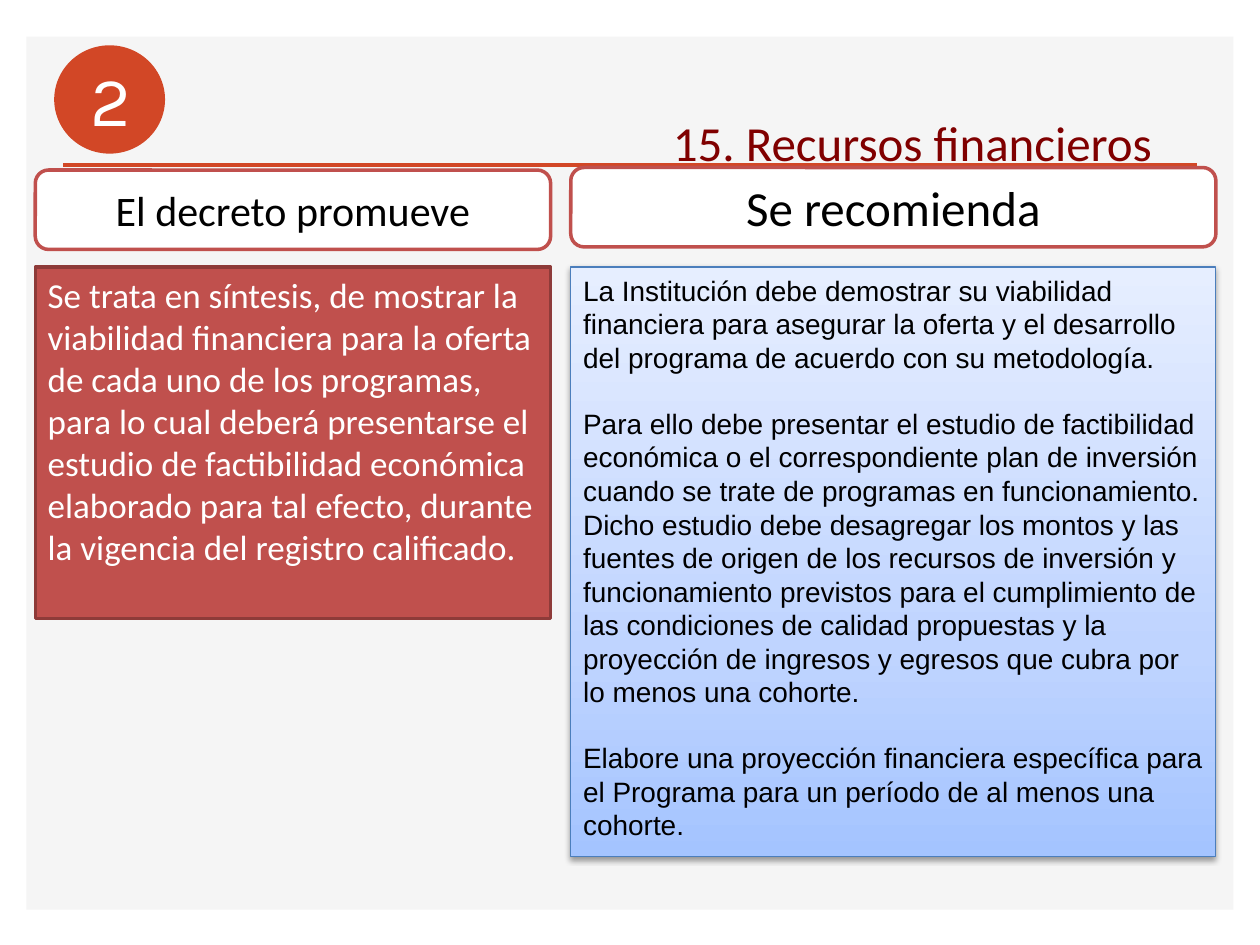
import pptx
import pptx.util
from lxml import etree
from pptx.dml.color import RGBColor
from pptx.enum.shapes import MSO_CONNECTOR, MSO_SHAPE
from pptx.enum.text import MSO_ANCHOR, MSO_AUTO_SIZE, PP_ALIGN
from pptx.oxml.ns import qn
from pptx.util import Inches, Pt

COLORS = {
    "backdrop": "F5F5F5",
    "accent": "D24726",
    "title": "800000",
    "red": "C0504D",
    "dark_red": "8E3B39",
    "blue": "4B7EBC",
    "white": "FFFFFF",
    "black": "000000",
}
BLUE_STOPS = [(0, "A4C4FF"), (35, "BFD4FF"), (100, "E6EEFF")]

DECREE = [
    "Se trata en síntesis, de mostrar la viabilidad financiera para la oferta "
    "de cada uno de los programas, para lo cual deberá presentarse "
    "el estudio de factibilidad económica elaborado para tal efecto, "
    "durante la vigencia del registro calificado."
]
ADVICE = [
    "La Institución debe demostrar su viabilidad financiera para asegurar la "
    "oferta y el desarrollo del programa de acuerdo con su metodología.",
    "Para ello debe presentar el estudio de factibilidad económica o el "
    "correspondiente plan de inversión cuando se trate de programas en "
    "funcionamiento. Dicho estudio debe desagregar los montos y las fuentes "
    "de origen de los recursos de inversión y funcionamiento previstos para "
    "el cumplimiento de las condiciones de calidad propuestas y la proyección "
    "de ingresos y egresos que cubra por lo menos una cohorte.",
    "Elabore una proyección financiera específica para el Programa para un "
    "período de al menos una cohorte.",
]


def color(name):
    return RGBColor.from_string(COLORS[name])


def write(shape, paragraphs, size, ink, font="Calibri", align=PP_ALIGN.LEFT,
          anchor=MSO_ANCHOR.TOP, grow=True, wrap=True, gap=0):
    """Fill a shape with paragraphs; gap is the space between them in points."""
    frame = shape.text_frame
    frame.word_wrap = wrap
    frame.vertical_anchor = anchor
    frame.auto_size = (MSO_AUTO_SIZE.SHAPE_TO_FIT_TEXT if grow
                       else MSO_AUTO_SIZE.NONE)
    for index, text in enumerate(paragraphs):
        para = frame.add_paragraph() if index else frame.paragraphs[0]
        para.alignment = align
        para.space_before = Pt(gap if index else 0)
        span = para.add_run()
        span.text = text
        span.font.name = font
        span.font.size = Pt(size)
        span.font.color.rgb = color(ink)


def add_block(shapes, kind, left, top, width, height, fill=None, line=None,
              weight=2):
    block = shapes.add_shape(kind, Inches(left), Inches(top),
                             Inches(width), Inches(height))
    block.shadow.inherit = False
    if fill:
        block.fill.solid()
        block.fill.fore_color.rgb = color(fill)
    if line:
        block.line.color.rgb = color(line)
        block.line.width = Pt(weight)
    else:
        block.line.fill.background()
    return block


def add_blue_finish(block):
    """Give the block a three-stop vertical gradient and a soft shadow."""
    block.fill.gradient()
    block.fill.gradient_angle = 90
    properties = block.element.spPr
    stops = properties.find(".//" + qn("a:gsLst"))
    for stop in list(stops):
        stops.remove(stop)
    for position, value in BLUE_STOPS:
        stop = etree.SubElement(stops, qn("a:gs"), pos=str(position * 1000))
        etree.SubElement(stop, qn("a:srgbClr"), val=value)
    shadow = etree.SubElement(
        properties.find(qn("a:effectLst")), qn("a:outerShdw"),
        blurRad=str(Pt(3.1)), dist=str(Pt(1.6)), dir="5400000", rotWithShape="0")
    shade = etree.SubElement(shadow, qn("a:srgbClr"), val=COLORS["black"])
    etree.SubElement(shade, qn("a:alpha"), val="38000")


def add_backdrop(page, left, top, width, height):
    """Draw the grey panel and header rule; return the rule."""
    add_block(page.shapes, MSO_SHAPE.RECTANGLE, left, top, width, height,
              "backdrop")
    rule_top = Inches(top + 1.02)
    rule = page.shapes.add_connector(
        MSO_CONNECTOR.STRAIGHT, Inches(left + 0.29), rule_top,
        Inches(left + width - 0.29), rule_top)
    rule.line.color.rgb = color("accent")
    rule.line.width = Pt(2)
    etree.SubElement(rule.element.spPr, qn("a:effectLst"))
    return rule


def add_badge(page, number, left, top, width, height):
    badge = page.shapes.add_group_shape()
    add_block(badge.shapes, MSO_SHAPE.OVAL, left, top, width, height, "accent")
    label = badge.shapes.add_textbox(Inches(left - 0.15), Inches(top + 0.04),
                                     Inches(1.2), Inches(0.77))
    write(label, [number], 40, "white", font="Karla", align=PP_ALIGN.CENTER)


def place_title(page, text, rule, left, top, width, height):
    """Move the title placeholder, stacked just above the header rule."""
    title = page.shapes.title
    title.left, title.top = Inches(left), Inches(top)
    title.width, title.height = Inches(width), Inches(height)
    write(title, [text], 28, "title", wrap=False)
    rule.element.addnext(title.element)


def add_heading(page, text, size, left, top, width, height=0.63):
    heading = add_block(page.shapes, MSO_SHAPE.ROUNDED_RECTANGLE,
                        left, top, width, height, "white", "red")
    write(heading, [text], size, "black", align=PP_ALIGN.CENTER,
          anchor=MSO_ANCHOR.MIDDLE, grow=False)


def add_decree(page, left, top, width, height):
    panel = add_block(page.shapes, MSO_SHAPE.RECTANGLE, left, top, width, height,
                      "red", "dark_red")
    write(panel, DECREE, 20, "white")


def add_advice(page, left, top, width, height):
    panel = add_block(page.shapes, MSO_SHAPE.RECTANGLE, left, top, width, height,
                      line="blue", weight=0.75)
    add_blue_finish(panel)
    write(panel, ADVICE, 16, "black", font="Arial", gap=18.4)


def main():
    deck = pptx.Presentation()
    deck.slide_width, deck.slide_height = Inches(10), Inches(7.5)
    page = deck.slides.add_slide(deck.slide_layouts.get_by_name("Title Only"))
    rule = add_backdrop(page, 0.21, 0.29, 9.58, 6.93)
    add_badge(page, "2", 0.43, 0.36, 0.88, 0.86)
    place_title(page, "15. Recursos financieros", rule, 5.24, 0.84, 4.05, 0.57)
    add_decree(page, 0.28, 2.12, 4.09, 2.79)
    add_advice(page, 4.53, 2.12, 5.12, 4.68)
    add_heading(page, "El decreto promueve", 24, 0.28, 1.35, 4.09)
    add_heading(page, "Se recomienda", 28, 4.53, 1.33, 5.12)
    deck.save("out.pptx")


if __name__ == "__main__":
    main()
